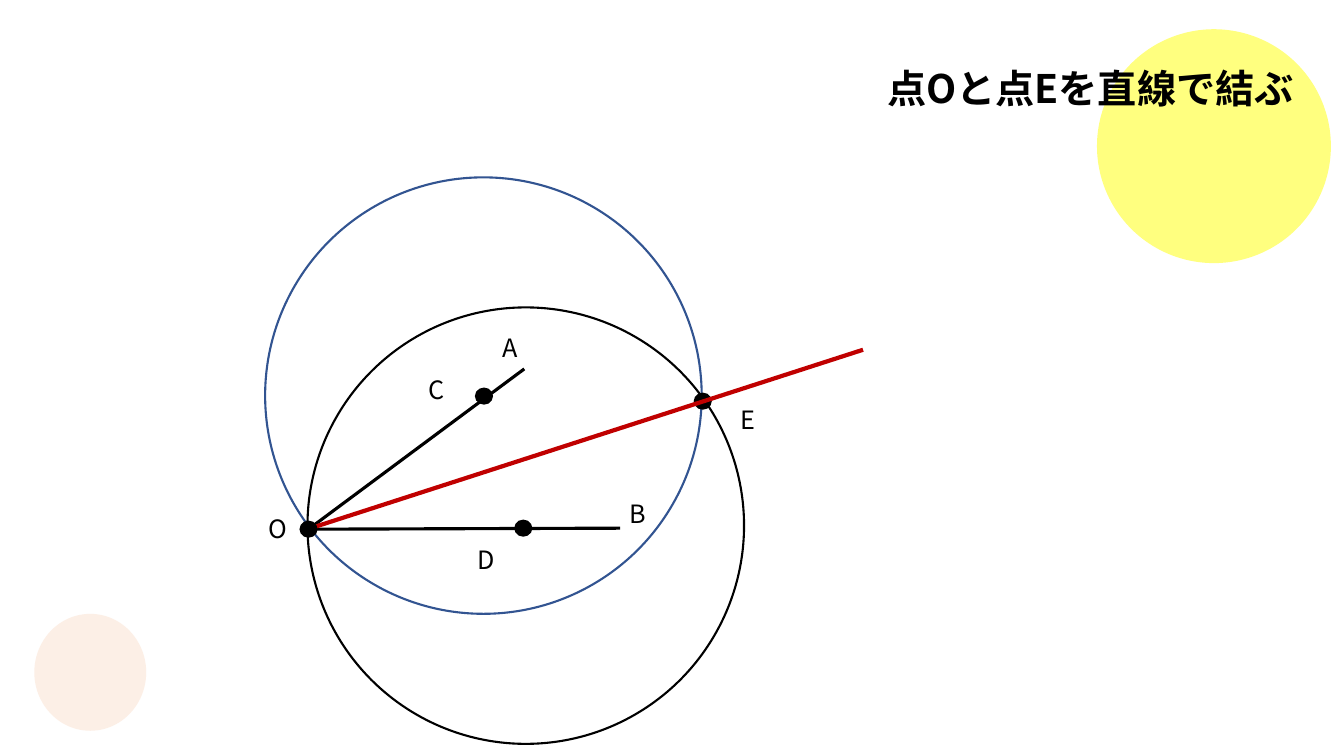
import pptx
import pptx.util
import pptx.dml.color
import pptx.enum.shapes
import pptx.enum.text
import pptx.oxml
import pptx.oxml.ns
from lxml import etree

Inches = pptx.util.Inches
FONT = "Noto Sans CJK JP"

# Content: lengths in inches
TITLE = "点Oと点Eを直線で結ぶ"
POINTS = {"O": (3.06, 5.25), "C": (4.8, 3.93), "D": (5.19, 5.24), "E": (6.97, 3.98)}
DOT_W, DOT_H = 0.18, 0.17
LABELS = [  # text, left, top, width
    ("A", 4.89, 3.25, 0.38),
    ("B", 6.15, 4.89, 0.37),
    ("O", 2.56, 5.04, 0.39),
    ("D", 4.64, 5.35, 0.39),
    ("C", 4.15, 3.66, 0.37),
    ("E", 7.25, 3.96, 0.34),
]
LABEL_H = 0.4
RAYS = [(POINTS["O"], (5.2, 3.66)), (POINTS["O"], (6.15, 5.24))]
BISECTOR = ((3.02, 5.26), (8.56, 3.47))
COMPASS_SIZE = 4.33
COMPASS_CIRCLES = [(2.63, 1.76, "325491"), (3.05, 3.05, "000000")]
DECORATIONS = [  # left, top, width, height, colour, opacity %
    (0.34, 6.09, 1.11, 1.16, "F8CBAD", 30),
    (10.88, 0.29, 2.32, 2.32, "FFFF00", 50),
]

prs = pptx.Presentation()
prs.slide_width, prs.slide_height = Inches(13.33), Inches(7.5)
s = prs.slides.add_slide(prs.slide_layouts[6])


def color(hex_text):
    return pptx.dml.color.RGBColor.from_string(hex_text)


def add_ellipse(x, y, w, h, fill=None, line=None, opacity=None):
    sp = s.shapes.add_shape(pptx.enum.shapes.MSO_SHAPE.OVAL,
                            Inches(x), Inches(y), Inches(w), Inches(h))
    sp.shadow.inherit = False
    if fill:
        sp.fill.solid()
        sp.fill.fore_color.rgb = color(fill)
    else:
        sp.fill.background()
    if line:
        sp.line.color.rgb = color(line)
        sp.line.width = pptx.util.Pt(1.5)
    else:
        sp.line.fill.background()
    if opacity:
        clr = sp._element.spPr.find(".//" + pptx.oxml.ns.qn("a:srgbClr"))
        etree.SubElement(clr, pptx.oxml.ns.qn("a:alpha"), val=str(opacity * 1000))


def add_line(start, end, line="000000", width=2.25):
    cn = s.shapes.add_connector(pptx.enum.shapes.MSO_CONNECTOR.STRAIGHT,
                                *[Inches(v) for v in start + end])
    cn.line.color.rgb = color(line)
    cn.line.width = pptx.util.Pt(width)
    etree.SubElement(cn._element.spPr, pptx.oxml.ns.qn("a:effectLst"))


def add_text(text, x, y, w, h, size=18, bold=False, fill=None, wrap=False):
    sp = s.shapes.add_textbox(Inches(x), Inches(y), Inches(w), Inches(h))
    if fill:
        sp.fill.solid()
        sp.fill.fore_color.rgb = color(fill)
    tf = sp.text_frame
    tf.word_wrap = wrap
    tf.auto_size = pptx.enum.text.MSO_AUTO_SIZE.SHAPE_TO_FIT_TEXT
    r = tf.paragraphs[0].add_run()
    r.text = text
    r.font.size = pptx.util.Pt(size)
    r.font.bold = bold
    r.font.name = FONT
    r.font.color.rgb = color("000000")
    etree.SubElement(r.font._element, pptx.oxml.ns.qn("a:ea"), typeface=FONT)


# Labels and the angle AOB
for text, x, y, w in LABELS:
    add_text(text, x, y, w, LABEL_H, fill="FFFFFF")
for start, end in RAYS:
    add_line(start, end)

# Compass circles, points and bisector
for x, y, line in COMPASS_CIRCLES:
    add_ellipse(x, y, COMPASS_SIZE, COMPASS_SIZE, line=line)
for name in "CDE":
    cx, cy = POINTS[name]
    add_ellipse(cx - DOT_W / 2, cy - DOT_H / 2, DOT_W, DOT_H, fill="000000")
add_line(*BISECTOR, line="C00000", width=3)
cx, cy = POINTS["O"]
add_ellipse(cx - DOT_W / 2, cy - DOT_H / 2, DOT_W, DOT_H, fill="000000")

# Decorations and title
for x, y, w, h, fill, opacity in DECORATIONS:
    add_ellipse(x, y, w, h, fill=fill, opacity=opacity)
add_text(TITLE, 8.7, 0.59, 4.29, 1.04, size=28, bold=True, wrap=True)

prs.save("out.pptx")
